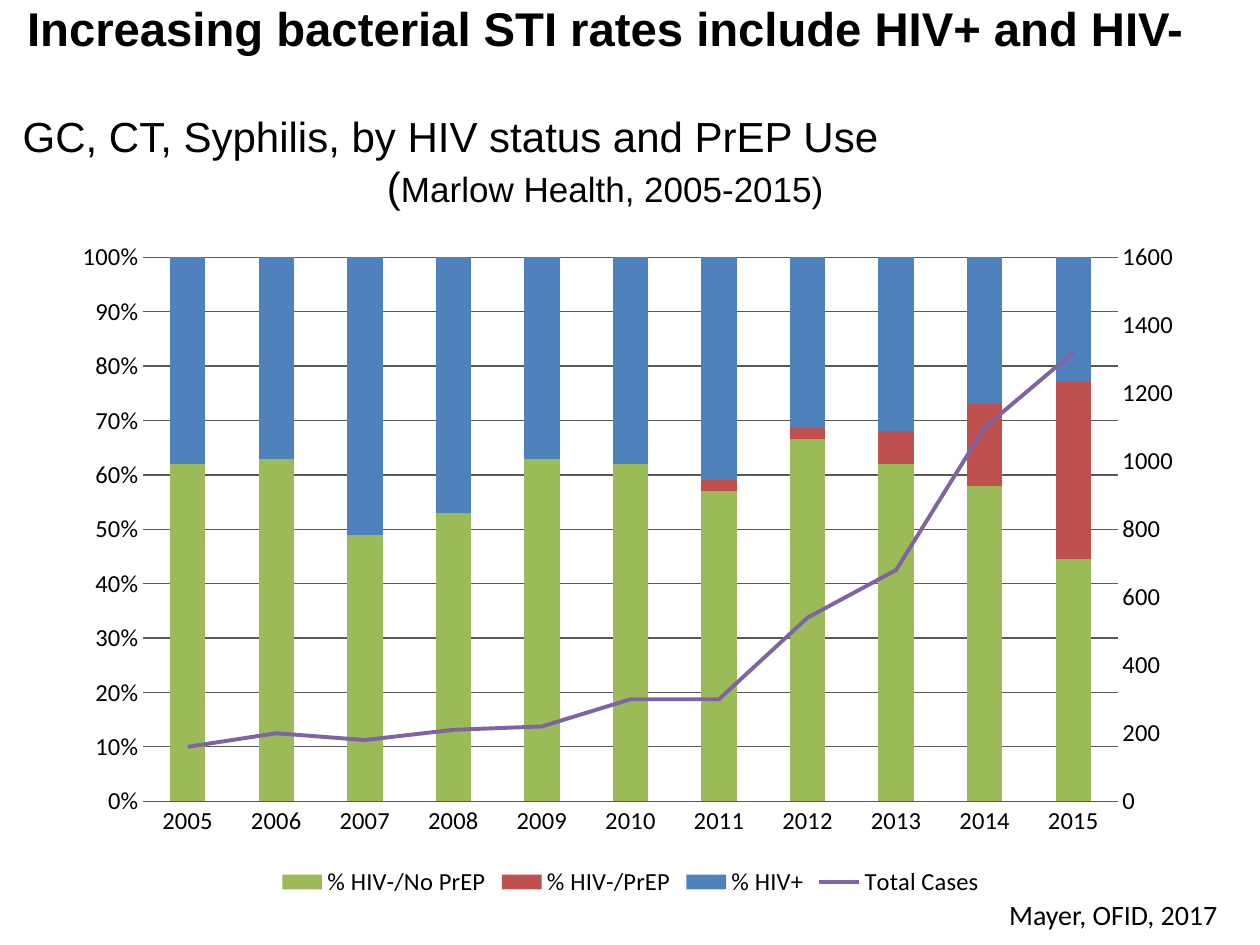
from copy import deepcopy
from dataclasses import dataclass

from lxml import etree
from pptx import Presentation
from pptx.chart.axis import CategoryAxis, ValueAxis
from pptx.chart.data import CategoryChartData
from pptx.dml.color import RGBColor
from pptx.enum.chart import XL_CHART_TYPE as ChartType
from pptx.enum.chart import XL_LEGEND_POSITION as LegendPosition
from pptx.enum.chart import XL_MARKER_STYLE as MarkerStyle
from pptx.enum.chart import XL_TICK_MARK as TickMark
from pptx.enum.text import MSO_ANCHOR as Anchor
from pptx.enum.text import PP_ALIGN as Align
from pptx.oxml import parse_xml
from pptx.oxml.ns import qn
from pptx.util import Inches, Pt


@dataclass(frozen=True)
class Theme:
    heading_font: str = "Arial"
    body_font: str = "Calibri"
    text: str = "000000"
    grid: str = "595959"
    total: str = "8064A2"
    title_size: int = 27
    subtitle_size: int = 24
    place_size: int = 20
    credit_size: int = 16
    axis_size: int = 14
    chart_size: int = 10


THEME = Theme()

HEADING = [
    (Align.CENTER, 31, [("Increasing bacterial STI rates include HIV+ and HIV-", THEME.title_size, True)]),
    (Align.LEFT, 0, [("GC, CT, Syphilis, by HIV status and PrEP Use", THEME.subtitle_size, False)]),
    (Align.CENTER, 0, [("(", THEME.subtitle_size, False),
                       ("Marlow Health, 2005-2015)", THEME.place_size, False)]),
]
CREDIT = "Mayer, OFID, 2017"

YEARS = [str(year) for year in range(2005, 2016)]
SHARES = [
    ("% HIV-/No PrEP", "9BBB59", [62, 63, 49, 53, 63, 62, 57, 66, 62, 58, 45]),
    ("% HIV-/PrEP", "C0504D", [0, 0, 0, 0, 0, 0, 2, 2, 6, 15, 33]),
    ("% HIV+", "4F81BD", [38, 37, 51, 47, 37, 38, 41, 31, 32, 27, 23]),
]
TOTAL_CASES = ("Total Cases", [160, 200, 180, 210, 220, 300, 300, 540, 680, 1100, 1320])
PLOT_LAYOUT = {"x": 0.07, "y": 0.04, "w": 0.86, "h": 0.81}
RIGHT_AXIS_IDS = ("50010", "50020")
CHART_NS = "http://schemas.openxmlformats.org/drawingml/2006/chart"


def style_font(font, name, size, bold=False):
    font.name, font.size, font.bold = name, Pt(size), bold
    font.color.rgb = RGBColor.from_string(THEME.text)


def add_text_box(slide, *box):
    text_frame = slide.shapes.add_textbox(*map(Inches, box)).text_frame
    text_frame.word_wrap = True
    text_frame.margin_left = text_frame.margin_right = Inches(0.07)
    text_frame.margin_top = text_frame.margin_bottom = Inches(0.04)
    return text_frame


def add_heading(slide):
    text_frame = add_text_box(slide, 0.11, 0.21, 9.39, 1.25)
    text_frame.vertical_anchor = Anchor.MIDDLE
    for index, (alignment, space_after, runs) in enumerate(HEADING):
        paragraph = text_frame.add_paragraph() if index else text_frame.paragraphs[0]
        paragraph.alignment = alignment
        paragraph.space_after = Pt(space_after)
        for text, size, bold in runs:
            run = paragraph.add_run()
            run.text = text
            style_font(run.font, THEME.heading_font, size, bold)


def add_credit(slide):
    text_frame = add_text_box(slide, 7.94, 7.08, 2.06, 0.35)
    text_frame.text = CREDIT
    style_font(text_frame.paragraphs[0].runs[0].font, THEME.body_font, THEME.credit_size)


def style_axis(axis):
    axis.major_tick_mark = axis.minor_tick_mark = TickMark.NONE
    axis.format.line.fill.background()
    style_font(axis.tick_labels.font, THEME.body_font, THEME.axis_size)


def remove_children(parent, tag):
    for child in parent.findall(qn(tag)):
        parent.remove(child)


def set_plot_layout(plot_area):
    remove_children(plot_area, "c:layout")
    settings = {"layoutTarget": "inner", "xMode": "edge", "yMode": "edge", **PLOT_LAYOUT}
    layout = etree.Element(qn("c:layout"))
    manual = etree.SubElement(layout, qn("c:manualLayout"))
    for name, value in settings.items():
        etree.SubElement(manual, qn(f"c:{name}")).set("val", str(value))
    plot_area.insert(0, layout)


def move_total_to_right_axis(chart, plot_area):
    bar_chart = plot_area.find(qn("c:barChart"))
    total = bar_chart.findall(qn("c:ser"))[-1]
    bar_chart.remove(total)
    remove_children(total, "c:invertIfNegative")
    category_id, value_id = RIGHT_AXIS_IDS
    line_chart = parse_xml(
        f'<c:lineChart xmlns:c="{CHART_NS}"><c:grouping val="standard"/>'
        f'<c:varyColors val="0"/><c:marker val="1"/>'
        f'<c:axId val="{category_id}"/><c:axId val="{value_id}"/></c:lineChart>'
    )
    line_chart.insert(2, total)
    bar_chart.addnext(line_chart)

    value_element = plot_area.find(qn("c:valAx"))
    right_value = deepcopy(value_element)
    right_category = deepcopy(plot_area.find(qn("c:catAx")))
    value_element.addnext(right_value)
    right_value.addnext(right_category)
    for element, own_id, cross_id in ((right_value, value_id, category_id),
                                      (right_category, category_id, value_id)):
        element.find(qn("c:axId")).set("val", own_id)
        element.find(qn("c:crossAx")).set("val", cross_id)
    right_value.find(qn("c:axPos")).set("val", "r")
    remove_children(right_value, "c:crosses")
    crosses = etree.Element(qn("c:crosses"))
    crosses.set("val", "max")
    right_value.find(qn("c:crossAx")).addnext(crosses)
    CategoryAxis(right_category).visible = False

    axis = ValueAxis(right_value)
    axis.has_major_gridlines = False
    axis.minimum_scale, axis.maximum_scale, axis.major_unit = 0, 1600, 200
    axis.tick_labels.number_format = "General"

    series = chart.plots[1].series[0]
    series.smooth = False
    series.marker.style = MarkerStyle.NONE
    series.format.line.color.rgb = RGBColor.from_string(THEME.total)
    series.format.line.width = Pt(2.25)


def add_cases_chart(slide):
    data = CategoryChartData()
    data.categories = YEARS
    for name, _, values in SHARES:
        data.add_series(name, values)
    data.add_series(*TOTAL_CASES)
    box = map(Inches, (0.51, 1.83, 8.99, 5.33))
    chart = slide.shapes.add_chart(ChartType.COLUMN_STACKED_100, *box, data).chart
    style_font(chart.font, THEME.body_font, THEME.chart_size)
    chart.has_title = False
    chart.has_legend = True
    chart.legend.position = LegendPosition.BOTTOM
    chart.legend.include_in_layout = False
    style_font(chart.legend.font, THEME.body_font, THEME.axis_size)

    plot = chart.plots[0]
    plot.gap_width, plot.overlap = 150, 100
    plot.vary_by_categories = False
    for series, (_, color, _) in zip(plot.series, SHARES):
        series.format.fill.solid()
        series.format.fill.fore_color.rgb = RGBColor.from_string(color)

    style_axis(chart.category_axis)
    style_axis(chart.value_axis)
    chart.value_axis.tick_labels.number_format = "0%"
    chart.value_axis.tick_labels.number_format_is_linked = False
    grid_line = chart.value_axis.major_gridlines.format.line
    grid_line.color.rgb = RGBColor.from_string(THEME.grid)
    grid_line.width = Pt(0.75)

    plot_area = chart.plots[0]._element.getparent()
    move_total_to_right_axis(chart, plot_area)
    set_plot_layout(plot_area)


def main():
    presentation = Presentation()
    presentation.slide_width, presentation.slide_height = Inches(10), Inches(7.5)
    slide = presentation.slides.add_slide(presentation.slide_layouts[6])
    add_cases_chart(slide)
    add_credit(slide)
    add_heading(slide)
    presentation.save("out.pptx")


if __name__ == "__main__":
    main()
